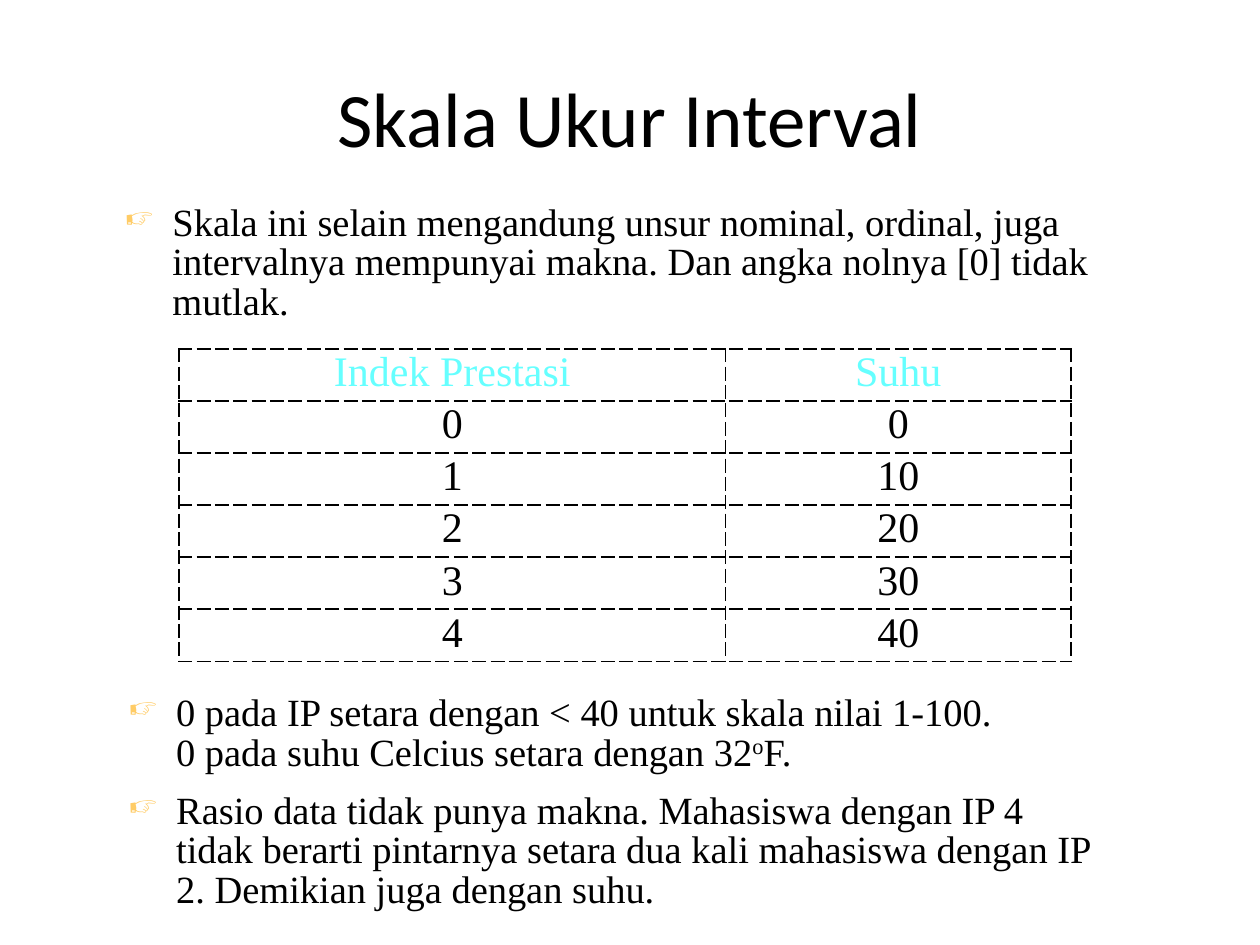
from lxml.etree import SubElement
from pptx import Presentation
from pptx.dml.color import RGBColor
from pptx.enum.text import MSO_ANCHOR as Anchor, PP_ALIGN as Align
from pptx.oxml.ns import qn
from pptx.util import Inches, Pt

BLACK, CYAN, GOLD = "000000", "66FFFF", "FFCC66"
SERIF = "Times New Roman"
LINE_SPACING = 0.85
HEADER = ("Indek Prestasi", "Suhu")
SCORES = [(str(grade), str(grade * 10)) for grade in range(5)]
INTRO = ["Skala ini selain mengandung unsur nominal, ordinal, juga intervalnya "
         "mempunyai makna. Dan angka nolnya [0] tidak mutlak."]
# A caret marks the start and end of superscript text; \v is a line break
NOTES = ["0 pada IP setara dengan < 40 untuk skala nilai 1-100.\v"
         "0 pada suhu Celcius setara dengan 32^o^F.",
         "Rasio data tidak punya makna. Mahasiswa dengan IP 4 tidak berarti "
         "pintarnya setara dua kali mahasiswa dengan IP 2. Demikian juga dengan suhu."]


def color(value):
    return RGBColor.from_string(value)


def set_font(para, name, size, value):
    para.font.name = name
    para.font.size = Pt(size)
    para.font.color.rgb = color(value)


def add_text_box(page, left, top, width, height):
    box = page.shapes.add_textbox(Inches(left), Inches(top), Inches(width), Inches(height))
    box.text_frame.word_wrap = True
    return box.text_frame


def add_title(page, text, *area):
    frame = add_text_box(page, *area)
    frame.vertical_anchor = Anchor.MIDDLE
    para = frame.paragraphs[0]
    para.text = text
    para.alignment = Align.CENTER
    set_font(para, "Calibri", 44, BLACK)


def add_bullet(para):
    props = para._p.get_or_add_pPr()
    props.set("marL", str(Inches(0.38)))
    props.set("indent", str(-Inches(0.38)))
    tint = SubElement(props, qn("a:buClr"))
    SubElement(tint, qn("a:srgbClr"), val=GOLD)
    SubElement(props, qn("a:buSzPct"), val="75000")
    SubElement(props, qn("a:buChar"), char="☞")


def add_bullet_list(page, items, *area):
    frame = add_text_box(page, *area)
    for index, item in enumerate(items):
        para = frame.add_paragraph() if index else frame.paragraphs[0]
        para.line_spacing = LINE_SPACING
        if index:
            para.space_before = Pt(11)
        add_bullet(para)
        set_font(para, SERIF, 22, BLACK)
        for part, text in enumerate(item.split("^")):
            lines = text.split("\v")
            for number, line in enumerate(lines):
                if number:
                    para.add_line_break()
                span = para.add_run()
                span.text = line
                if part % 2:
                    span.font._element.set("baseline", "30000")


def add_dashed_borders(cell):
    props = cell._tc.get_or_add_tcPr()
    for position, side in enumerate(("a:lnL", "a:lnR", "a:lnT", "a:lnB")):
        line = props.makeelement(qn(side), {"w": str(Pt(1))})
        props.insert(position, line)
        fill = SubElement(line, qn("a:solidFill"))
        SubElement(fill, qn("a:srgbClr"), val=BLACK)
        SubElement(line, qn("a:prstDash"), val="dash")


def add_score_table(page, left, top, width, height):
    rows = [HEADER, *SCORES]
    table = page.shapes.add_table(len(rows), len(HEADER), Inches(left), Inches(top),
                                  Inches(width), Inches(height)).table
    table.first_row = table.horz_banding = False
    table.columns[0].width = Inches(4.34)
    table.columns[1].width = Inches(width - 4.34)
    for row_index, values in enumerate(rows):
        for column, value in enumerate(values):
            cell = table.cell(row_index, column)
            cell.fill.background()
            cell.vertical_anchor = Anchor.MIDDLE
            cell.margin_top = cell.margin_bottom = Inches(0.03)
            add_dashed_borders(cell)
            para = cell.text_frame.paragraphs[0]
            para.text = value
            para.alignment = Align.CENTER
            para.line_spacing = LINE_SPACING
            set_font(para, SERIF, 24, BLACK if row_index else CYAN)


def main():
    deck = Presentation()
    deck.slide_width, deck.slide_height = Inches(10), Inches(7.5)
    page = deck.slides.add_slide(deck.slide_layouts[6])
    add_title(page, "Skala Ukur Interval", 0.5, 0.3, 9, 1.25)
    add_bullet_list(page, INTRO, 0.89, 1.58, 8.11, 1.03)
    add_score_table(page, 1.42, 2.77, 7.08, 2.48)
    add_bullet_list(page, NOTES, 0.92, 5.47, 7.86, 1.69)
    deck.save("out.pptx")


if __name__ == "__main__":
    main()
